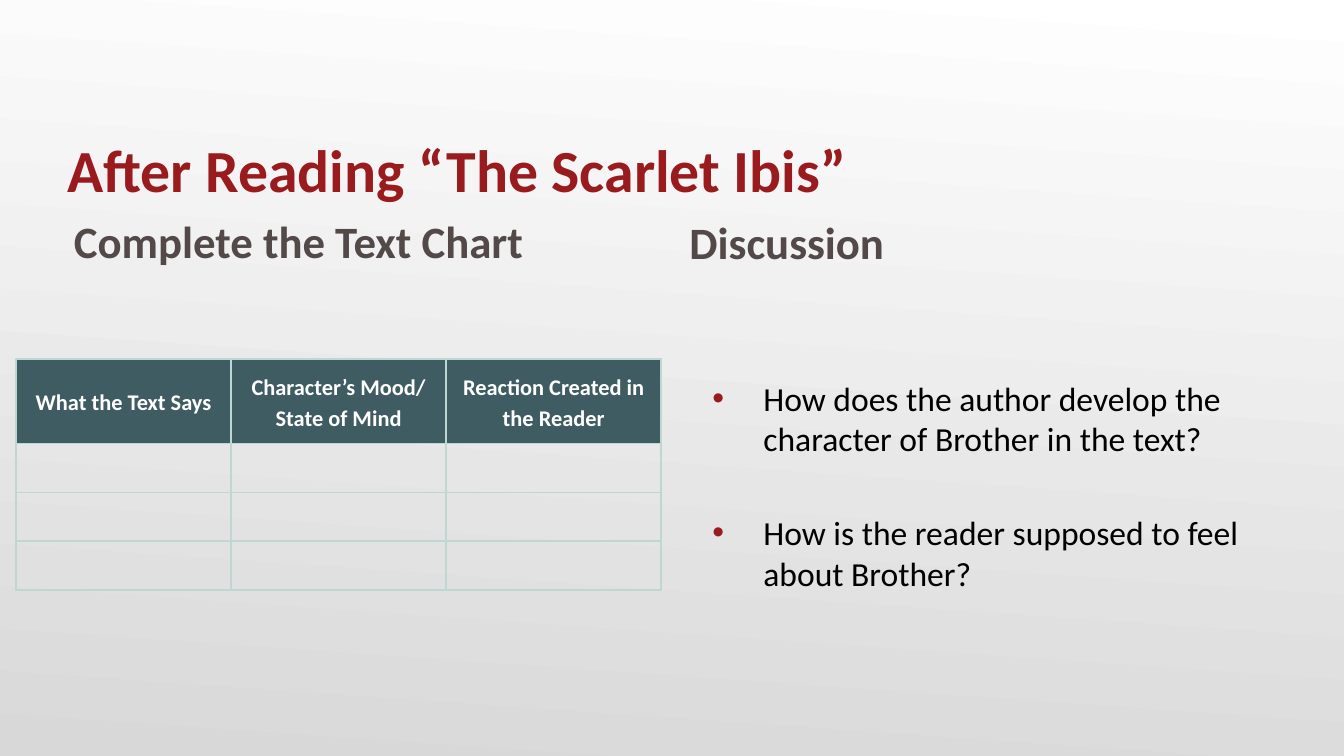
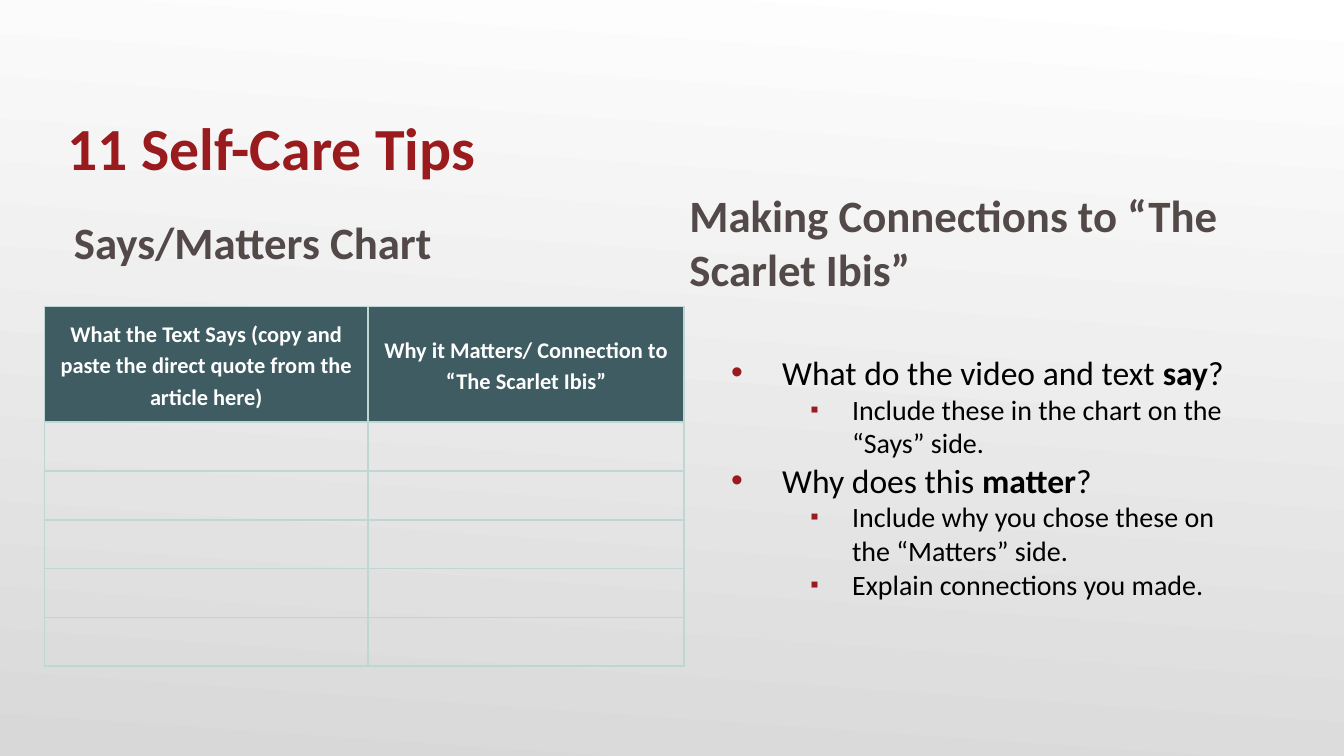
"""Build two reading-lesson slides, each pairing a chart with a bulleted list."""
from dataclasses import dataclass

from lxml import etree
from pptx import Presentation
from pptx.dml.color import RGBColor
from pptx.enum.text import MSO_ANCHOR, MSO_AUTO_SIZE, PP_ALIGN
from pptx.oxml.ns import qn
from pptx.util import Pt

PX = 9144
SLIDE_WIDTH = 1000 * PX
SLIDE_HEIGHT = SLIDE_WIDTH * 9 // 16
LEFT, CENTER = PP_ALIGN.LEFT, PP_ALIGN.CENTER
MIDDLE, BOTTOM = MSO_ANCHOR.MIDDLE, MSO_ANCHOR.BOTTOM
NO_AUTOFIT = MSO_AUTO_SIZE.NONE
COMPARISON = 4
TITLE, LEFT_HEAD, LEFT_BODY, RIGHT_HEAD, RIGHT_BODY = range(5)


@dataclass(frozen=True)
class Theme:
    font: str = "Calibri"
    accent: str = "991B1E"
    heading: str = "534949"
    text: str = "000000"
    header_fill: str = "3E5C61"
    header_text: str = "FFFFFF"
    border: str = "BED7D3"
    bg_top: str = "FFFFFF"
    bg_bottom: str = "D8D8D8"
    bg_angle: int = 266
    title_size: int = 32
    heading_size: int = 24
    list_sizes: tuple = (18, 15)
    table_size: int = 12


THEME = Theme()
BULLETS = [
    dict(char="•", indent=50, hang=38, percent=100),
    dict(char="▪", indent=102, hang=31, percent=85),
]
EMPTY_ROW = 36
CELL_MARGIN = 8

SLIDES = [
    dict(
        title="After Reading “The Scarlet Ibis”",
        title_top=58,
        left_head="Complete the Text Chart",
        left_head_top=152,
        right_head="Discussion",
        list_box=(508, 206, 442, 315),
        list_gap=29,
        items=[
            (0, ["How does the author develop the character of Brother in the text?"]),
            (0, ["How is the reader supposed to feel about Brother?"]),
        ],
        table_at=(12, 267),
        columns=[160, 160, 160],
        header_height=63,
        empty_rows=3,
        headers=[
            "What the Text Says",
            "Character’s Mood/ State of Mind",
            "Reaction Created in the Reader",
        ],
    ),
    dict(
        title="11 Self-Care Tips",
        title_top=42,
        left_head="Says/Matters Chart",
        left_head_top=153,
        right_head="Making Connections to “The Scarlet Ibis”",
        list_box=(522, 241, 420, 232),
        list_gap=0,
        items=[
            (0, ["What do the video and text ", "say", "?"]),
            (1, ["Include these in the chart on the “Says” side."]),
            (0, ["Why does this ", "matter", "?"]),
            (1, ["Include why you chose these on the “Matters” side."]),
            (1, ["Explain connections you made."]),
        ],
        table_at=(33, 228),
        columns=[241, 235],
        header_height=86,
        empty_rows=5,
        headers=[
            "What the Text Says (copy and paste the direct quote from the article here)",
            "Why it Matters/ Connection to “The Scarlet Ibis”",
        ],
    ),
]


def rgb(value):
    return RGBColor.from_string(value)


def write(p, text, size, color, bold=False, align=LEFT, before=0, after=0, spacing=1.0):
    p.alignment = align
    p.space_before, p.space_after = Pt(before), Pt(after)
    p.line_spacing = spacing
    r = p.add_run()
    r.text = text
    r.font.name, r.font.size, r.font.bold = THEME.font, Pt(size), bold
    r.font.color.rgb = rgb(color)


def frame(sp, box, margins, anchor):
    sp.left, sp.top, sp.width, sp.height = [v * PX for v in box]
    tf = sp.text_frame
    tf.word_wrap, tf.auto_size, tf.vertical_anchor = True, NO_AUTOFIT, anchor
    tf.margin_left, tf.margin_top, tf.margin_right, tf.margin_bottom = [m * PX for m in margins]
    return tf


def add_bullet(p, char, indent, hang, percent):
    pPr = p._p.get_or_add_pPr()
    pPr.set("marL", str(indent * PX))
    pPr.set("indent", str(-hang * PX))
    clr = etree.SubElement(pPr, qn("a:buClr"))
    etree.SubElement(clr, qn("a:srgbClr"), val=THEME.accent)
    etree.SubElement(pPr, qn("a:buSzPct"), val=str(percent * 1000))
    etree.SubElement(pPr, qn("a:buFont"), typeface="Arial")
    etree.SubElement(pPr, qn("a:buChar"), char=char)


def add_list(sp, box, items, gap):
    tf = frame(sp, box, (10, 0, 10, 5), MIDDLE)
    for i, (level, parts) in enumerate(items):
        p = tf.add_paragraph() if i else tf.paragraphs[0]
        p.level = level
        add_bullet(p, **BULLETS[level])
        for j, part in enumerate(parts):
            write(p, part, THEME.list_sizes[level], THEME.text,
                  bold=j % 2 == 1, before=gap if i else 0)


def format_cell(cell, fill=None):
    tcPr = cell._tc.get_or_add_tcPr()
    for side in ("lnL", "lnR", "lnT", "lnB"):
        ln = etree.SubElement(tcPr, qn(f"a:{side}"), w=str(Pt(1)))
        solid = etree.SubElement(ln, qn("a:solidFill"))
        etree.SubElement(solid, qn("a:srgbClr"), val=THEME.border)
    if fill:
        cell.fill.solid()
        cell.fill.fore_color.rgb = rgb(fill)
    else:
        cell.fill.background()
    cell.vertical_anchor = MIDDLE
    cell.margin_left = cell.margin_right = CELL_MARGIN * PX
    cell.margin_top = cell.margin_bottom = CELL_MARGIN * PX


def add_chart_table(s, at, columns, headers, header_height, empty_rows):
    heights = [header_height] + [EMPTY_ROW] * empty_rows
    box = [v * PX for v in (*at, sum(columns), sum(heights))]
    table = s.shapes.add_table(len(heights), len(columns), *box).table
    table.first_row = table.horz_banding = False
    for column, width in zip(table.columns, columns):
        column.width = width * PX
    for i, height in enumerate(heights):
        table.rows[i].height = height * PX
        for j, header in enumerate(headers):
            cell = table.cell(i, j)
            p = cell.text_frame.paragraphs[0]
            if i == 0:
                format_cell(cell, THEME.header_fill)
                write(p, header, THEME.table_size, THEME.header_text, bold=True,
                      align=CENTER, after=6, spacing=1.15)
            else:
                format_cell(cell)
                etree.SubElement(p._p, qn("a:endParaRPr"), sz=str(THEME.table_size * 100))


def set_background(master):
    fill = master.background.fill
    fill.gradient()
    fill.gradient_angle = THEME.bg_angle
    for stop, color, position in zip(fill.gradient_stops, (THEME.bg_top, THEME.bg_bottom), (0, 1)):
        stop.color.rgb = rgb(color)
        stop.position = position


def add_slide(prs, data):
    s = prs.slides.add_slide(prs.slide_layouts[COMPARISON])
    holders = {sp.placeholder_format.idx: sp for sp in s.placeholders}
    empty = holders[LEFT_BODY].element
    empty.getparent().remove(empty)

    tf = frame(holders[TITLE], (50, data["title_top"], 900, 94), (0, 5, 0, 0), BOTTOM)
    write(tf.paragraphs[0], data["title"], THEME.title_size, THEME.accent, bold=True)
    for idx, key, left, top in (
        (LEFT_HEAD, "left_head", 50, data["left_head_top"]),
        (RIGHT_HEAD, "right_head", 508, 153),
    ):
        tf = frame(holders[idx], (left, top, 442, 54), (5, 0, 5, 0), MIDDLE)
        write(tf.paragraphs[0], data[key], THEME.heading_size, THEME.heading, bold=True)
    add_list(holders[RIGHT_BODY], data["list_box"], data["items"], data["list_gap"])
    add_chart_table(s, data["table_at"], data["columns"], data["headers"],
                    data["header_height"], data["empty_rows"])


def main():
    prs = Presentation()
    prs.slide_width, prs.slide_height = SLIDE_WIDTH, SLIDE_HEIGHT
    set_background(prs.slide_master)
    for data in SLIDES:
        add_slide(prs, data)
    prs.save("out.pptx")


if __name__ == "__main__":
    main()
